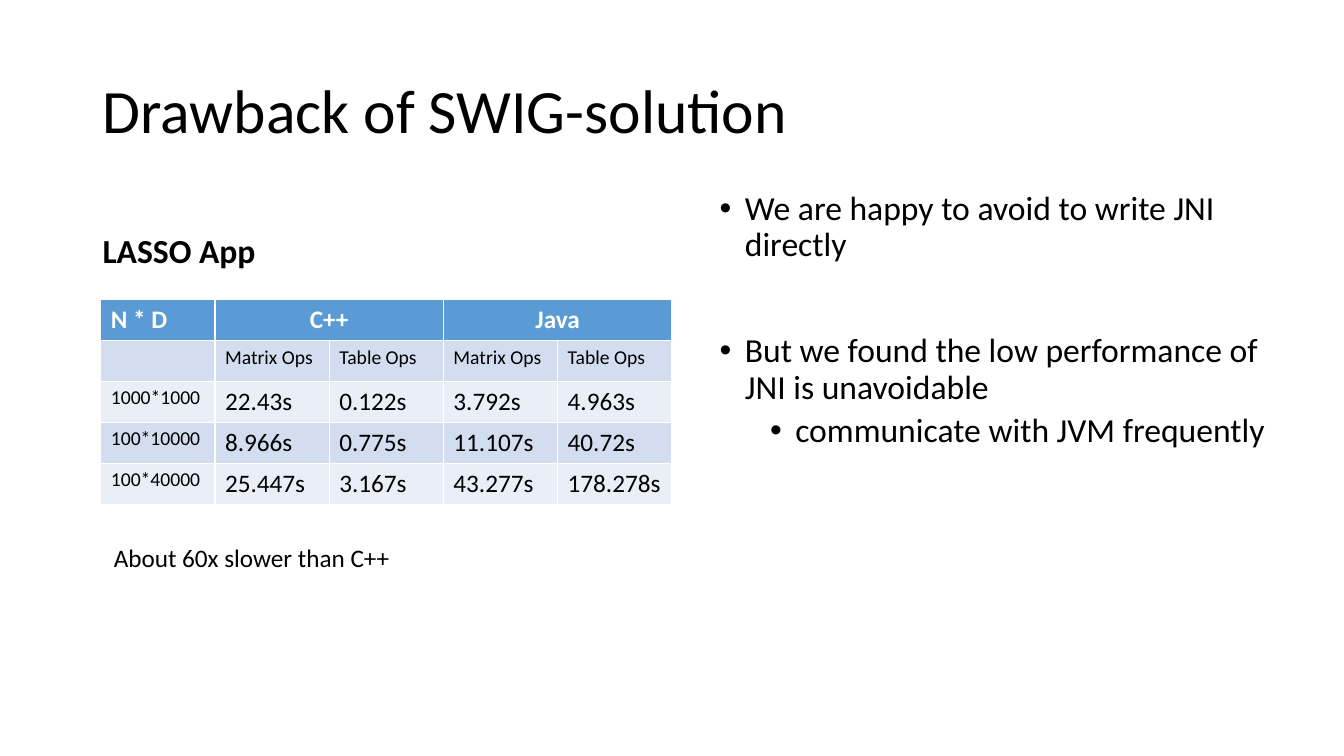
import pptx
import pptx.util
import pptx.dml.color
import pptx.enum.text
import pptx.oxml

Pt = pptx.util.Pt
Align = pptx.enum.text.PP_ALIGN
Anchor = pptx.enum.text.MSO_ANCHOR
Fit = pptx.enum.text.MSO_AUTO_SIZE
RGB = pptx.dml.color.RGBColor.from_string

HUES = {"ink": "000000", "white": "FFFFFF", "head": "5B9BD5",
        "dark": "D2DEEF", "light": "EAEFF7"}

deck = pptx.Presentation()
deck.slide_width = pptx.util.Inches(13.33)
deck.slide_height = pptx.util.Inches(7.5)
slide = deck.slides.add_slide(deck.slide_layouts.get_by_name("Comparison"))


def area(left, top, width, height):
    """Turn percentages of the slide into a box of lengths."""
    wide, high = deck.slide_width / 100, deck.slide_height / 100
    return [int(left * wide), int(top * high), int(width * wide), int(height * high)]


def style(para, size, hue="ink", bold=False, align=Align.LEFT):
    para.alignment = align
    font = para.font
    font.name, font.size, font.bold = "Calibri", Pt(size), bold
    font.color.rgb = RGB(HUES[hue])


# Placeholders: title, table heading and list
title, label, points = [slide.placeholders[i] for i in (0, 1, 2)]
for i in (3, 4):
    spare = slide.placeholders[i].element
    spare.getparent().remove(spare)

for shape, box, anchor in [
    (title, (6.88, 5.32, 86.25, 19.33), Anchor.MIDDLE),
    (label, (6.88, 24.65, 86.25, 11.87), Anchor.BOTTOM),
    (points, (52.8, 24.65, 42.3, 65.6), Anchor.TOP),
]:
    shape.left, shape.top, shape.width, shape.height = area(*box)
    shape.text_frame.auto_size = Fit.NONE
    shape.text_frame.vertical_anchor = anchor

for shape, text, size, bold in [(title, "Drawback of SWIG-solution", 44, False),
                                (label, "LASSO App", 24, True)]:
    shape.text_frame.text = text
    para = shape.text_frame.paragraphs[0]
    para.line_spacing = 0.9
    style(para, size, bold=bold)

items = [("We are happy to avoid to write JNI directly", 0, 10),
         ("But we found the low performance of JNI is unavoidable", 0, 50),
         ("communicate with JVM frequently", 1, 5)]
points.text_frame.text = "\n".join(text for text, _, _ in items)
for para, (_, level, gap) in zip(points.text_frame.paragraphs, items):
    para.level, para.line_spacing, para.space_before = level, 0.9, Pt(gap)
    style(para, 24)
    props = para._p.get_or_add_pPr()
    props.set("marL", str(Pt(18 + 36 * level)))
    props.set("indent", str(-Pt(18)))
    bullet = pptx.oxml.parse_xml(
        '<a:buChar xmlns:a="http://schemas.openxmlformats.org/drawingml/2006/main" char="•"/>')
    props.insert_element_before(bullet, "a:tabLst", "a:defRPr", "a:extLst")

# Timings
rows = [
    ["N * D", "C++", "", "Java", ""],
    ["", "Matrix Ops", "Table Ops", "Matrix Ops", "Table Ops"],
    ["1000*1000", "22.43s", "0.122s", "3.792s", "4.963s"],
    ["100*10000", "8.966s", "0.775s", "11.107s", "40.72s"],
    ["100*40000", "25.447s", "3.167s", "43.277s", "178.278s"],
]
table = slide.shapes.add_table(5, 5, *area(7.5, 39.6, 42.5, 27.1)).table
for c in (1, 3):
    table.cell(0, c).merge(table.cell(0, c + 1))
for r, row in enumerate(rows):
    for c, text in enumerate(row):
        cell = table.cell(r, c)
        cell.fill.solid()
        band = "head" if r == 0 else "dark" if r % 2 else "light"
        cell.fill.fore_color.rgb = RGB(HUES[band])
        if not text:
            continue
        cell.text = text
        para = cell.text_frame.paragraphs[0]
        if r == 0:
            style(para, 18, "white", True, Align.CENTER if c else Align.LEFT)
            cell.vertical_anchor = Anchor.MIDDLE if c else Anchor.TOP
        else:
            style(para, 14 if r == 1 or c == 0 else 18)

# Remark under the table
note = slide.shapes.add_textbox(*area(7.73, 71.07, 26.25, 5.33)).text_frame
note.word_wrap = True
note.auto_size = Fit.SHAPE_TO_FIT_TEXT
note.text = "About 60x slower than C++"
style(note.paragraphs[0], 18)

deck.save("out.pptx")
